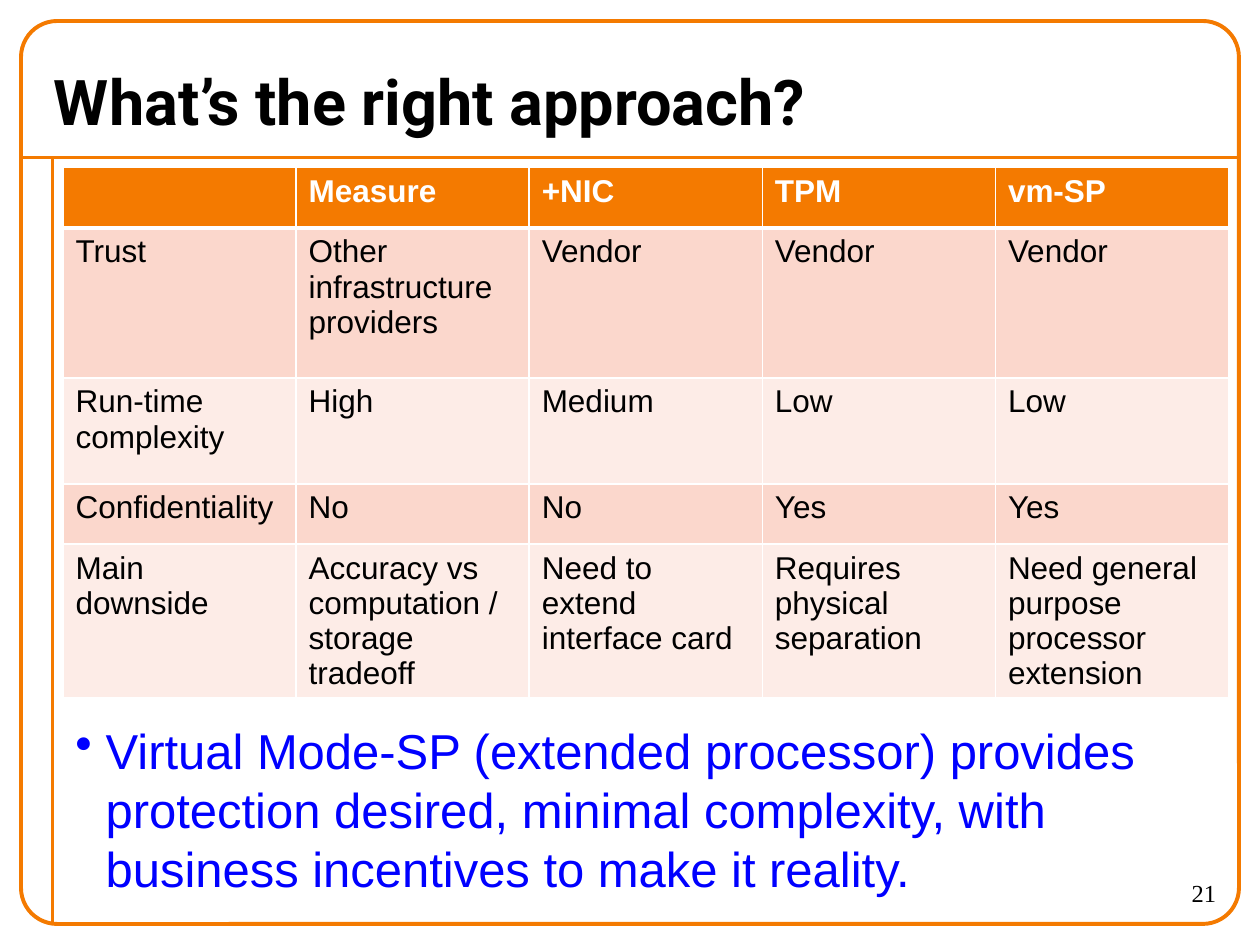
from dataclasses import dataclass

from lxml import etree
from pptx import Presentation
from pptx.dml.color import RGBColor
from pptx.enum.shapes import MSO_CONNECTOR, MSO_SHAPE
from pptx.enum.text import MSO_ANCHOR, PP_ALIGN
from pptx.oxml.ns import qn
from pptx.util import Emu, Inches, Pt

STRAIGHT = MSO_CONNECTOR.STRAIGHT
ROUNDED = MSO_SHAPE.ROUNDED_RECTANGLE
TOP, MIDDLE = MSO_ANCHOR.TOP, MSO_ANCHOR.MIDDLE
LEFT, RIGHT = PP_ALIGN.LEFT, PP_ALIGN.RIGHT

ORANGE = RGBColor(0xF4, 0x7A, 0x00)
DARK_BAND = RGBColor(0xFB, 0xD7, 0xCC)
LIGHT_BAND = RGBColor(0xFD, 0xEC, 0xE7)
WHITE = RGBColor(0xFF, 0xFF, 0xFF)
BLACK = RGBColor(0x00, 0x00, 0x00)
BLUE = RGBColor(0x00, 0x00, 0xFF)

SLIDE_WIDTH, SLIDE_HEIGHT = Inches(10), Inches(7.5)
FRAME_MARGIN = SLIDE_WIDTH // 60
FRAME_BOTTOM = SLIDE_HEIGHT - FRAME_MARGIN
RULE_TOP = SLIDE_HEIGHT // 6
RULE_LEFT = SLIDE_WIDTH // 24
LINE_WIDTH = Pt(2.25)

TABLE_LEFT, TABLE_TOP = Inches(0.5), Inches(1.33)
COLUMN_WIDTH = Inches(1.85)
ROW_HEIGHTS = (0.48, 1.19, 0.84, 0.48, 1.22)
TABLE_ROWS = (
    ("", "Measure", "+NIC", "TPM", "vm-SP"),
    ("Trust", "Other infrastructure providers", "Vendor", "Vendor", "Vendor"),
    ("Run-time complexity", "High", "Medium", "Low", "Low"),
    ("Confidentiality", "No", "No", "Yes", "Yes"),
    ("Main downside", "Accuracy vs computation / storage tradeoff",
     "Need to extend interface card", "Requires physical separation",
     "Need general purpose processor extension"),
)


@dataclass(frozen=True)
class TextBlock:
    text: str
    left: float
    top: float
    width: float
    height: float
    size: float
    font: str
    color: RGBColor
    bold: bool = False
    align: PP_ALIGN = LEFT
    anchor: MSO_ANCHOR = TOP
    bullet: bool = False


TEXT_BLOCKS = (
    TextBlock("What’s the right approach?", 0.33, 0.42, 8.82, 0.75,
              36, "Roboto", BLACK, bold=True, anchor=MIDDLE),
    TextBlock("21", 8.75, 6.92, 1, 0.42, 14, "Times New Roman", BLACK, align=RIGHT),
    TextBlock("Virtual Mode-SP (extended processor) provides protection desired, "
              "minimal complexity, with business incentives to make it reality.",
              0.5, 5.67, 9.33, 1.67, 28, "Arial", BLUE, bullet=True),
)


def style_font(paragraph, size: float, name: str, color: RGBColor, bold: bool) -> None:
    font = paragraph.font
    font.size, font.name, font.bold = Pt(size), name, bold
    font.color.rgb = color


def add_rule(slide, start: tuple[int, int], end: tuple[int, int]) -> None:
    rule = slide.shapes.add_connector(STRAIGHT, *map(Emu, start + end))
    rule.line.color.rgb = ORANGE
    rule.line.width = LINE_WIDTH
    etree.SubElement(rule._element.spPr, qn("a:effectLst"))


def add_frame(slide) -> None:
    add_rule(slide, (FRAME_MARGIN, RULE_TOP), (SLIDE_WIDTH - FRAME_MARGIN, RULE_TOP))
    add_rule(slide, (RULE_LEFT, RULE_TOP), (RULE_LEFT, FRAME_BOTTOM))
    frame = slide.shapes.add_shape(
        ROUNDED, FRAME_MARGIN, FRAME_MARGIN,
        SLIDE_WIDTH - 2 * FRAME_MARGIN, SLIDE_HEIGHT - 2 * FRAME_MARGIN)
    frame.adjustments[0] = 0.04
    frame.shadow.inherit = False
    frame.fill.background()
    frame.line.color.rgb = ORANGE
    frame.line.width = LINE_WIDTH


def add_bullet(paragraph) -> None:
    """Give the paragraph a round bullet with a hanging indent."""
    properties = paragraph._p.get_or_add_pPr()
    indent = Inches(0.24)
    properties.set("marL", str(indent))
    properties.set("indent", str(-indent))
    etree.SubElement(properties, qn("a:buChar"), char="•")


def add_text(slide, block: TextBlock) -> None:
    box = slide.shapes.add_textbox(
        *map(Inches, (block.left, block.top, block.width, block.height)))
    frame = box.text_frame
    frame.word_wrap = True
    frame.vertical_anchor = block.anchor
    paragraph = frame.paragraphs[0]
    paragraph.text = block.text
    paragraph.alignment = block.align
    if block.bullet:
        add_bullet(paragraph)
    style_font(paragraph, block.size, block.font, block.color, block.bold)


def set_borders(cell, is_header: bool) -> None:
    """Draw white borders, thicker under the header; they must precede the fill."""
    properties = cell._tc.get_or_add_tcPr()
    for side in ("L", "R", "T", "B"):
        width = Pt(3) if is_header and side == "B" else Pt(1)
        border = etree.SubElement(properties, qn(f"a:ln{side}"), w=str(width))
        fill = etree.SubElement(border, qn("a:solidFill"))
        etree.SubElement(fill, qn("a:srgbClr"), val=str(WHITE))


def add_comparison_table(slide) -> None:
    column_count = len(TABLE_ROWS[0])
    table = slide.shapes.add_table(
        len(TABLE_ROWS), column_count, TABLE_LEFT, TABLE_TOP,
        COLUMN_WIDTH * column_count, Inches(sum(ROW_HEIGHTS))).table
    for column in table.columns:
        column.width = COLUMN_WIDTH
    for row_index, (texts, height) in enumerate(zip(TABLE_ROWS, ROW_HEIGHTS)):
        table.rows[row_index].height = Inches(height)
        is_header = row_index == 0
        band = DARK_BAND if row_index % 2 else LIGHT_BAND
        for column_index, text in enumerate(texts):
            cell = table.cell(row_index, column_index)
            set_borders(cell, is_header)
            cell.fill.solid()
            cell.fill.fore_color.rgb = ORANGE if is_header else band
            cell.text = text
            style_font(cell.text_frame.paragraphs[0], 18, "Arial",
                       WHITE if is_header else BLACK, is_header)


def main() -> None:
    presentation = Presentation()
    presentation.slide_width, presentation.slide_height = SLIDE_WIDTH, SLIDE_HEIGHT
    slide = presentation.slides.add_slide(presentation.slide_layouts[6])
    add_frame(slide)
    add_comparison_table(slide)
    for block in TEXT_BLOCKS:
        add_text(slide, block)
    presentation.save("out.pptx")


if __name__ == "__main__":
    main()
